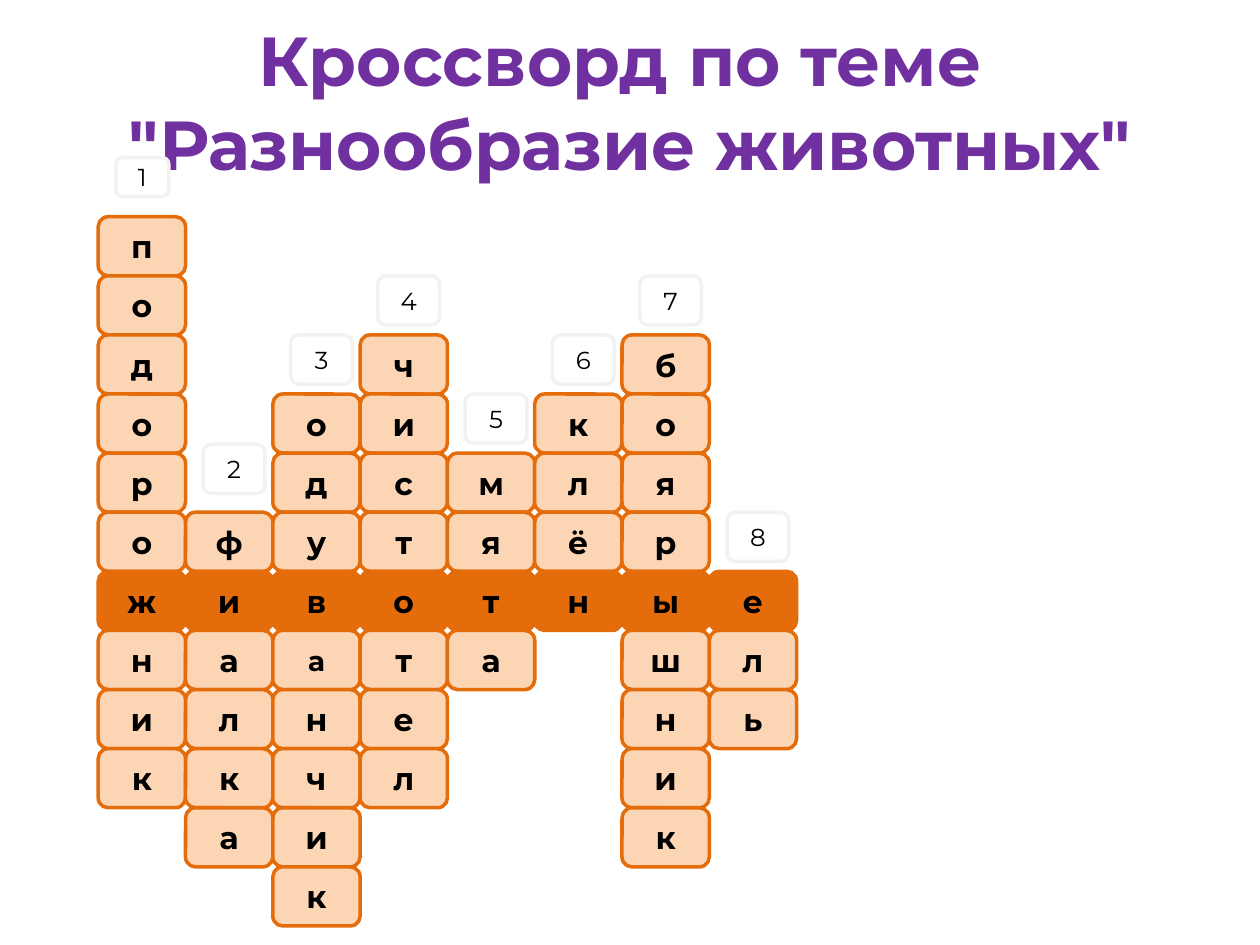
import pptx
import pptx.util
from pptx.dml.color import RGBColor
from pptx.enum.shapes import MSO_SHAPE
from pptx.enum.text import MSO_ANCHOR, MSO_AUTO_SIZE, PP_ALIGN

Inches, Pt = pptx.util.Inches, pptx.util.Pt

TITLE_LINES = ["Кроссворд по теме ", "\"Разнообразие животных\""]
# word, grid row of its first letter
WORDS = [
    ("подорожник", 0),
    ("фиалка", 5),
    ("одуванчик", 3),
    ("чистотел", 2),
    ("мята", 4),
    ("клён", 3),
    ("боярышник", 2),
    ("ель", 6),
]
KEY_ROW = 6
SMALL_LETTER = (2, 7)  # column, row

FONT = "Montserrat"
PURPLE = RGBColor(0x70, 0x30, 0xA0)
ORANGE = RGBColor(0xE4, 0x6C, 0x0A)
PEACH = RGBColor(0xFC, 0xD5, 0xB5)
WHITE = RGBColor(0xFF, 0xFF, 0xFF)
GREY = RGBColor(0xF2, 0xF2, 0xF2)
BLACK = RGBColor(0, 0, 0)

LEFT, TOP = 0.78, 1.72
CELL_W, CELL_H = (5.63 - LEFT) / 7, (6.88 - TOP) / 11
LABEL_SIZE = (0.49, 0.39)
FIRST_LABEL_SIZE = (0.42, 0.31)
LABEL_INDENT = 0.14
LABEL_LIFT = {2: 0.54}  # otherwise one row above the word


def add_run(p, text, size, color, bold):
    r = p.add_run()
    r.text = text
    r.font.name = FONT
    r.font.size = Pt(size)
    r.font.bold = bold
    r.font.color.rgb = color


def add_box(group, x, y, w, h, text, size, fill, line, bold):
    sp = group.shapes.add_shape(MSO_SHAPE.ROUNDED_RECTANGLE,
                                Inches(x), Inches(y), Inches(w), Inches(h))
    sp.shadow.inherit = False
    sp.fill.solid()
    sp.fill.fore_color.rgb = fill
    sp.line.color.rgb = line
    sp.line.width = Pt(2)
    tf = sp.text_frame
    tf.vertical_anchor = MSO_ANCHOR.MIDDLE
    p = tf.paragraphs[0]
    p.alignment = PP_ALIGN.CENTER
    add_run(p, text, size, BLACK, bold)


def add_title(s):
    title = s.shapes.title
    title.left, title.top = Inches(0.47), Inches(0)
    title.width, title.height = Inches(9.06), Inches(0.94)
    tf = title.text_frame
    tf.word_wrap = True
    tf.auto_size = MSO_AUTO_SIZE.NONE
    tf.vertical_anchor = MSO_ANCHOR.TOP
    tf.margin_top = Inches(0.14)
    p = tf.paragraphs[0]
    p.alignment = PP_ALIGN.CENTER
    for i, line in enumerate(TITLE_LINES):
        if i:
            p.add_line_break()
        add_run(p, line, 39.6, PURPLE, True)


def add_crossword(s):
    group = s.shapes.add_group_shape()
    for col, (word, start) in enumerate(WORDS):
        x = LEFT + col * CELL_W
        for row, letter in enumerate(word, start):
            size = 16 if (col, row) == SMALL_LETTER else 18
            fill = ORANGE if row == KEY_ROW else PEACH
            add_box(group, x, TOP + row * CELL_H, CELL_W, CELL_H,
                    letter, size, fill, ORANGE, True)
        number = col + 1
        y = TOP + start * CELL_H - LABEL_LIFT.get(number, CELL_H)
        w, h = FIRST_LABEL_SIZE if number == 1 else LABEL_SIZE
        add_box(group, x + LABEL_INDENT, y, w, h,
                str(number), 14, WHITE, GREY, False)


def main():
    prs = pptx.Presentation()
    prs.slide_width, prs.slide_height = Inches(10), Inches(7.5)
    s = prs.slides.add_slide(prs.slide_layouts[0])
    subtitle = s.placeholders[1].element
    subtitle.getparent().remove(subtitle)
    add_title(s)
    add_crossword(s)
    prs.save("out.pptx")


if __name__ == "__main__":
    main()
